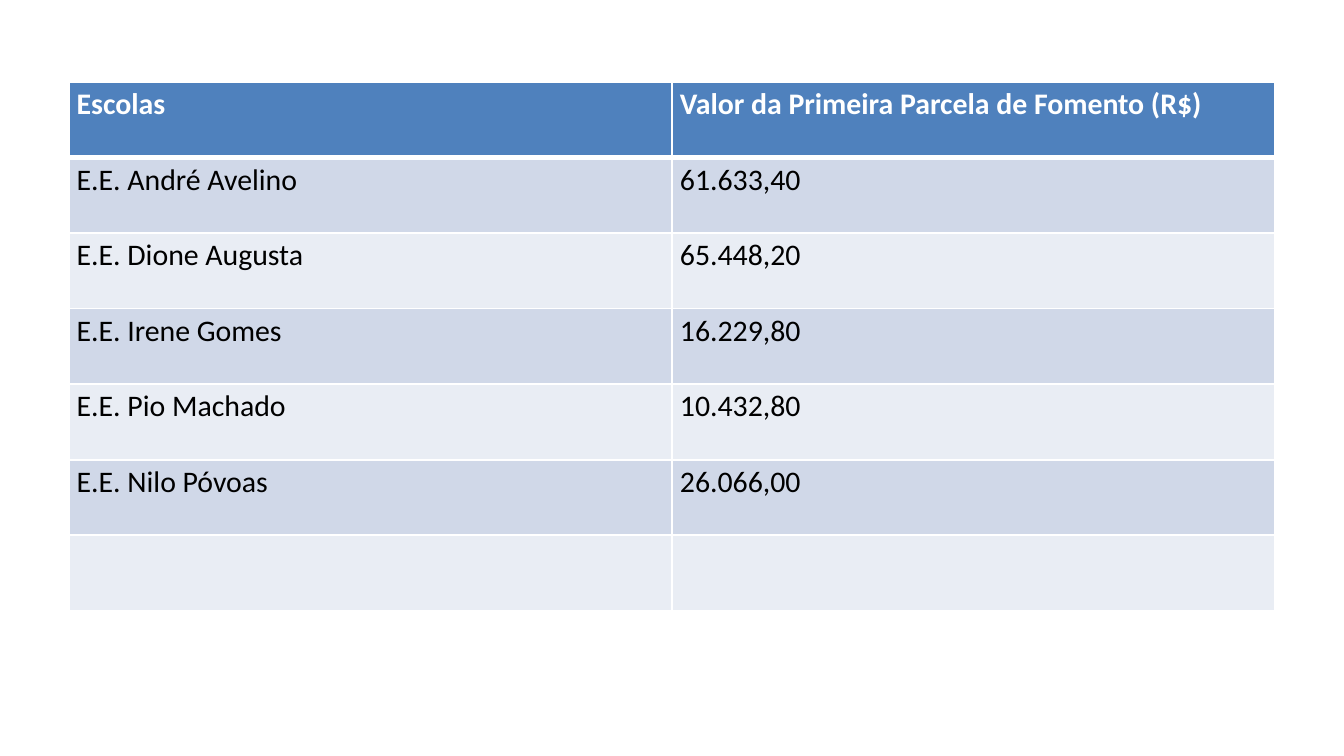
from lxml.etree import SubElement
from pptx import Presentation
from pptx.dml.color import RGBColor as Rgb
from pptx.oxml.ns import qn
from pptx.util import Cm, Pt

HUES = {
    "head": "4F81BD",
    "odd": "D0D8E8",
    "even": "E9EDF4",
    "white": "FFFFFF",
    "black": "000000",
}
ROWS = [
    ("Escolas", "Valor da Primeira Parcela de Fomento (R$)"),
    ("E.E. André Avelino", "61.633,40"),
    ("E.E. Dione Augusta", "65.448,20"),
    ("E.E. Irene Gomes", "16.229,80"),
    ("E.E. Pio Machado", "10.432,80"),
    ("E.E. Nilo Póvoas", "26.066,00"),
    ("", ""),
]


def add_edges(cell, top, base):
    """Draw white cell borders; top and base are widths in points."""
    props = cell._tc.get_or_add_tcPr()
    for tag, width in (("lnL", 1), ("lnR", 1), ("lnT", top), ("lnB", base)):
        line = SubElement(props, qn(f"a:{tag}"), w=str(Pt(width)))
        fill = SubElement(line, qn("a:solidFill"))
        SubElement(fill, qn("a:srgbClr"), val=HUES["white"])


def style_cell(cell, text, row):
    head = row == 0
    add_edges(cell, 3 if row == 1 else 1, 3 if head else 1)
    hue = "head" if head else "odd" if row % 2 else "even"
    cell.fill.solid()
    cell.fill.fore_color.rgb = Rgb.from_string(HUES[hue])
    cell.margin_left = cell.margin_right = Cm(0.15)
    cell.margin_top = cell.margin_bottom = Cm(0.08)
    cell.text_frame.text = text
    font = cell.text_frame.paragraphs[0].font
    font.name, font.size, font.bold = "Calibri", Pt(16), head
    font.color.rgb = Rgb.from_string(HUES["white" if head else "black"])


def add_grants(slide, left, top, width, height):
    """Place the table of schools and their first grant payment."""
    frame = slide.shapes.add_table(
        len(ROWS), len(ROWS[0]), left, top, width, height)
    for row, texts in enumerate(ROWS):
        for col, text in enumerate(texts):
            style_cell(frame.table.cell(row, col), text, row)


def main():
    deck = Presentation()
    deck.slide_width, deck.slide_height = Cm(25.4), Cm(14.29)
    slide = deck.slides.add_slide(deck.slide_layouts[6])
    add_grants(slide, Cm(1.3), Cm(1.55), Cm(22.8), Cm(10))
    deck.save("out.pptx")


if __name__ == "__main__":
    main()
